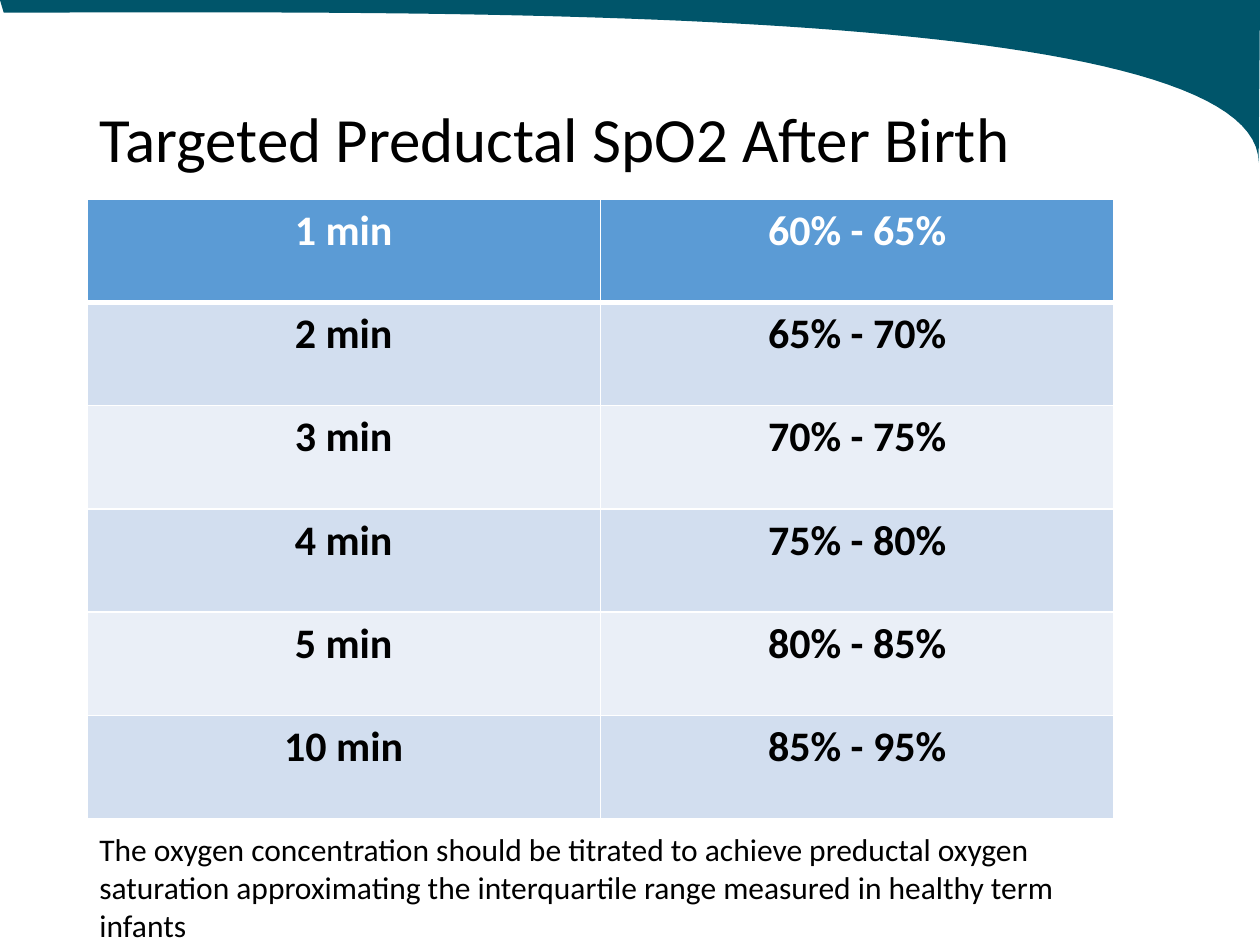
from lxml import etree
from pptx import Presentation
from pptx.dml.color import RGBColor
from pptx.enum.text import MSO_ANCHOR, PP_ALIGN
from pptx.oxml.ns import qn
from pptx.util import Inches, Pt

TEAL = RGBColor(0x00, 0x55, 0x6A)
BLUE = RGBColor(0x5B, 0x9B, 0xD5)
BAND_DARK = RGBColor(0xD2, 0xDE, 0xEF)
BAND_LIGHT = RGBColor(0xEA, 0xEF, 0xF7)
WHITE = RGBColor(0xFF, 0xFF, 0xFF)
BLACK = RGBColor(0x00, 0x00, 0x00)
MIDDLE = MSO_ANCHOR.MIDDLE
LEFT, CENTER = PP_ALIGN.LEFT, PP_ALIGN.CENTER
TITLE_ONLY = 5

TARGETS = [
    ("1 min", "60% - 65%"),
    ("2 min", "65% - 70%"),
    ("3 min", "70% - 75%"),
    ("4 min", "75% - 80%"),
    ("5 min", "80% - 85%"),
    ("10 min", "85% - 95%"),
]
NOTE = (
    "The oxygen concentration should be titrated to achieve preductal oxygen "
    "saturation approximating the interquartile range measured in healthy term infants"
)


def curve(start, first, second, end, steps=60):
    """Return points along a cubic Bezier curve, without its start."""
    points = []
    for step in range(1, steps + 1):
        t = step / steps
        weights = ((1 - t) ** 3, 3 * t * (1 - t) ** 2, 3 * t**2 * (1 - t), t**3)
        corners = (start, first, second, end)
        points.append(tuple(sum(w * c[axis] for w, c in zip(weights, corners)) for axis in (0, 1)))
    return points


class SlideBuilder:
    """Holds the text style and the current slide."""

    font_name = "Calibri"

    def __init__(self, deck):
        self.page = deck.slides.add_slide(deck.slide_layouts[TITLE_ONLY])

    def fill_text(self, frame, text, size, color=BLACK, bold=False, align=LEFT):
        """Put one styled paragraph in a text frame."""
        frame.word_wrap = True
        para = frame.paragraphs[0]
        para.alignment = align
        span = para.add_run()
        span.text = text
        span.font.color.rgb = color
        style = {"name": self.font_name, "size": Pt(size), "bold": bold}
        for name, value in style.items():
            setattr(span.font, name, value)
        return para

    def title(self, text, left, top, width, height):
        """Place and fill the title placeholder."""
        box = self.page.shapes.title
        place = {"left": left, "top": top, "width": width, "height": height}
        for name, value in place.items():
            setattr(box, name, Inches(value))
        box.text_frame.vertical_anchor = MIDDLE
        self.fill_text(box.text_frame, text, 36).line_spacing = 0.9

    def text(self, text, left, top, width, height):
        """Add a wrapped text box."""
        box = self.page.shapes.add_textbox(*map(Inches, (left, top, width, height)))
        self.fill_text(box.text_frame, text, 18)

    def swoosh(self, points):
        """Add a filled outline behind everything else."""
        builder = self.page.shapes.build_freeform(0, 0)
        builder.add_line_segments([(Inches(x), Inches(y)) for x, y in points], close=True)
        shape = builder.convert_to_shape()
        shape.shadow.inherit = False
        shape.fill.solid()
        shape.fill.fore_color.rgb = TEAL
        shape.line.fill.background()
        shape.element.getparent().insert(2, shape.element)

    def borders(self, cell, bottom):
        """Draw white borders round a cell, with widths in points."""
        properties = cell._tc.get_or_add_tcPr()
        widths = {"a:lnL": 1, "a:lnR": 1, "a:lnT": 1, "a:lnB": bottom}
        for index, (tag, width) in enumerate(widths.items()):
            line = etree.Element(qn(tag), w=str(Pt(width)))
            fill = etree.SubElement(line, qn("a:solidFill"))
            etree.SubElement(fill, qn("a:srgbClr"), val=str(WHITE))
            properties.insert(index, line)

    def table(self, rows, left, top, width, height):
        """Add a banded table whose first row is the header."""
        place = map(Inches, (left, top, width, height))
        table = self.page.shapes.add_table(len(rows), len(rows[0]), *place).table
        for row, values in enumerate(rows):
            header = row == 0
            band = BLUE if header else (BAND_LIGHT, BAND_DARK)[row % 2]
            for column, value in enumerate(values):
                cell = table.cell(row, column)
                cell.fill.solid()
                cell.fill.fore_color.rgb = band
                self.borders(cell, 3 if header else 1)
                color = WHITE if header else BLACK
                self.fill_text(cell.text_frame, value, 24, color, True, CENTER)


def main():
    """Build the slide and save it."""
    deck = Presentation()
    deck.slide_width, deck.slide_height = Inches(10), Inches(7.5)
    slide = SlideBuilder(deck)
    corner, tip, end = (10, 0), (9.99, 1.29), (0.03, 0.1)
    slide.swoosh(
        [corner]
        + curve(corner, (10, 0.14), (9.99, 1.15), tip)
        + curve(tip, (9.98, 0), (3.36, 0.1), end)
    )
    slide.title("Targeted Preductal SpO2 After Birth", 0.69, 0.4, 8.62, 1.45)
    slide.table(TARGETS, 0.69, 1.58, 8.15, 4.92)
    slide.text(NOTE, 0.69, 6.54, 8.15, 1.01)
    deck.save("out.pptx")


if __name__ == "__main__":
    main()
